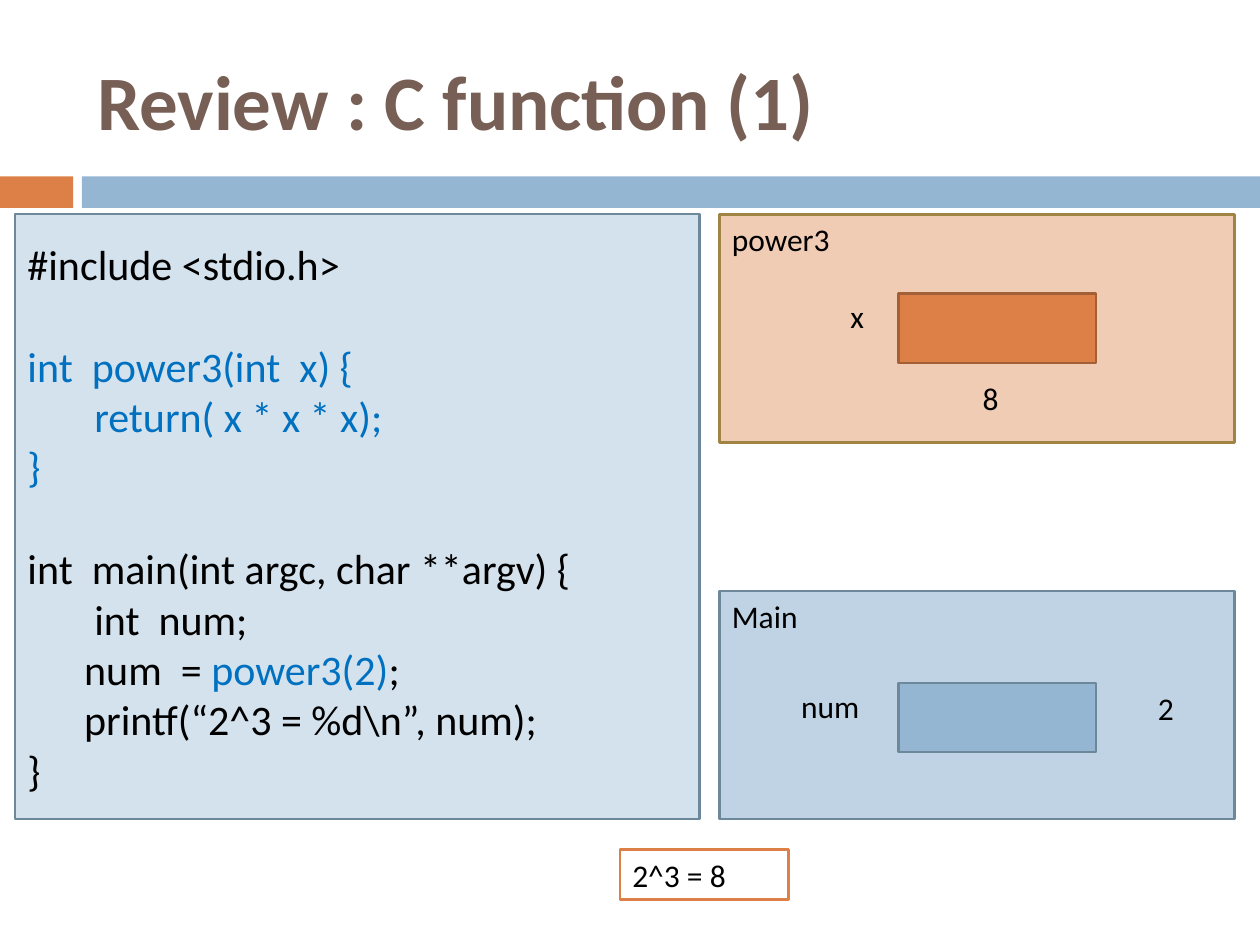
from pptx import Presentation
from pptx.dml.color import RGBColor
from pptx.enum.shapes import MSO_SHAPE
from pptx.enum.text import MSO_ANCHOR, PP_ALIGN
from pptx.util import Inches, Pt

COLORS = {
    "brown": "775F55", "orange": "DD8047", "orange_edge": "A35F35",
    "peach": "F1CCB5", "olive": "A08444", "blue": "94B6D2",
    "blue_edge": "6D879B", "pale": "D4E2ED", "light": "BFD3E4",
    "code": "0070C0", "black": "000000", "white": "FFFFFF",
}

prs = Presentation()
prs.slide_width, prs.slide_height = Inches(10), Inches(7.5)
COL, ROW = prs.slide_width / 100, prs.slide_height / 75
s = prs.slides.add_slide(prs.slide_layouts[5])


def rect(x, y, w, h, fill, edge=None):
    sp = s.shapes.add_shape(MSO_SHAPE.RECTANGLE, int(x * COL), int(y * ROW),
                            int(w * COL), int(h * ROW))
    sp.shadow.inherit = False
    sp.fill.solid()
    sp.fill.fore_color.rgb = RGBColor.from_string(COLORS[fill])
    if edge:
        sp.line.color.rgb = RGBColor.from_string(COLORS[edge])
        sp.line.width = Pt(1.5)
    else:
        sp.line.fill.background()
    return sp


def style(p, size, color, bold=False):
    p.alignment = PP_ALIGN.LEFT
    p.font.name, p.font.size, p.font.bold = "Calibri", Pt(size), bold
    p.font.color.rgb = RGBColor.from_string(COLORS[color])


rect(0, 14, 5.8, 2.5, "orange")
rect(6.5, 14, 93.5, 2.5, "blue")

title = s.shapes.title
title.left, title.top = int(6.7 * COL), int(2.5 * ROW)
title.width, title.height = int(89.2 * COL), int(10.8 * ROW)
tf = title.text_frame
tf.text = "Review : C function (1)"
tf.vertical_anchor = MSO_ANCHOR.MIDDLE
style(tf.paragraphs[0], 44, "brown", True)

LINE = 29.3
code = [
    (0, 0, [("#include <stdio.h>", "black")]),
    (1, 0, [("int  power3(int  x) {", "code")]),
    (0, 0.53, [("return( x * x * x);", "code")]),
    (0, 0, [("}", "code")]),
    (1, 0, [("int  main(int argc, char **argv) {", "black")]),
    (0, 0.53, [("int  num;", "black")]),
    (0, 0.45, [("num  = ", "black"), ("power3(2)", "code"), (";", "black")]),
    (0, 0.45, [("printf(“2^3 = %d\\n”, num);", "black")]),
    (0, 0, [("}", "black")]),
]
tf = rect(1.2, 17, 54.3, 48, "pale", "blue_edge").text_frame
tf.word_wrap = True
tf.vertical_anchor = MSO_ANCHOR.MIDDLE
for i, (gap, indent, parts) in enumerate(code):
    p = tf.add_paragraph() if i else tf.paragraphs[0]
    style(p, 24, parts[0][1])
    p.space_before = Pt(gap * LINE)
    p._p.get_or_add_pPr().set("marL", str(Inches(indent)))
    for text, color in parts:
        r = p.add_run()
        r.text = text
        r.font.color.rgb = RGBColor.from_string(COLORS[color])

panels = [
    ("power3", 57.1, 17, 40.9, 18.1, "peach", "olive", MSO_ANCHOR.TOP),
    ("Main", 57.1, 46.9, 40.9, 18.1, "light", "blue_edge", MSO_ANCHOR.TOP),
    ("2^3 = 8", 49.2, 67.4, 13.4, 4, "white", "orange", MSO_ANCHOR.MIDDLE),
]
for text, x, y, w, h, fill, edge, anchor in panels:
    tf = rect(x, y, w, h, fill, edge).text_frame
    tf.text = text
    tf.vertical_anchor = anchor
    style(tf.paragraphs[0], 18, "black")

for y, fill, edge in [(23.3, "orange", "orange_edge"), (54.2, "blue", "blue_edge")]:
    rect(71.3, y, 15.7, 5.5, fill, edge)

for text, x, y, w in [("num", 62.6, 54, 8.7), ("x", 66.5, 23.1, 5.5),
                      ("2", 90.9, 54.2, 3.9), ("8", 77, 29.6, 3.9)]:
    tf = s.shapes.add_textbox(int(x * COL), int(y * ROW),
                              int(w * COL), int(5.7 * ROW)).text_frame
    tf.word_wrap = True
    tf.text = text
    style(tf.paragraphs[0], 18, "black")

prs.save("out.pptx")
